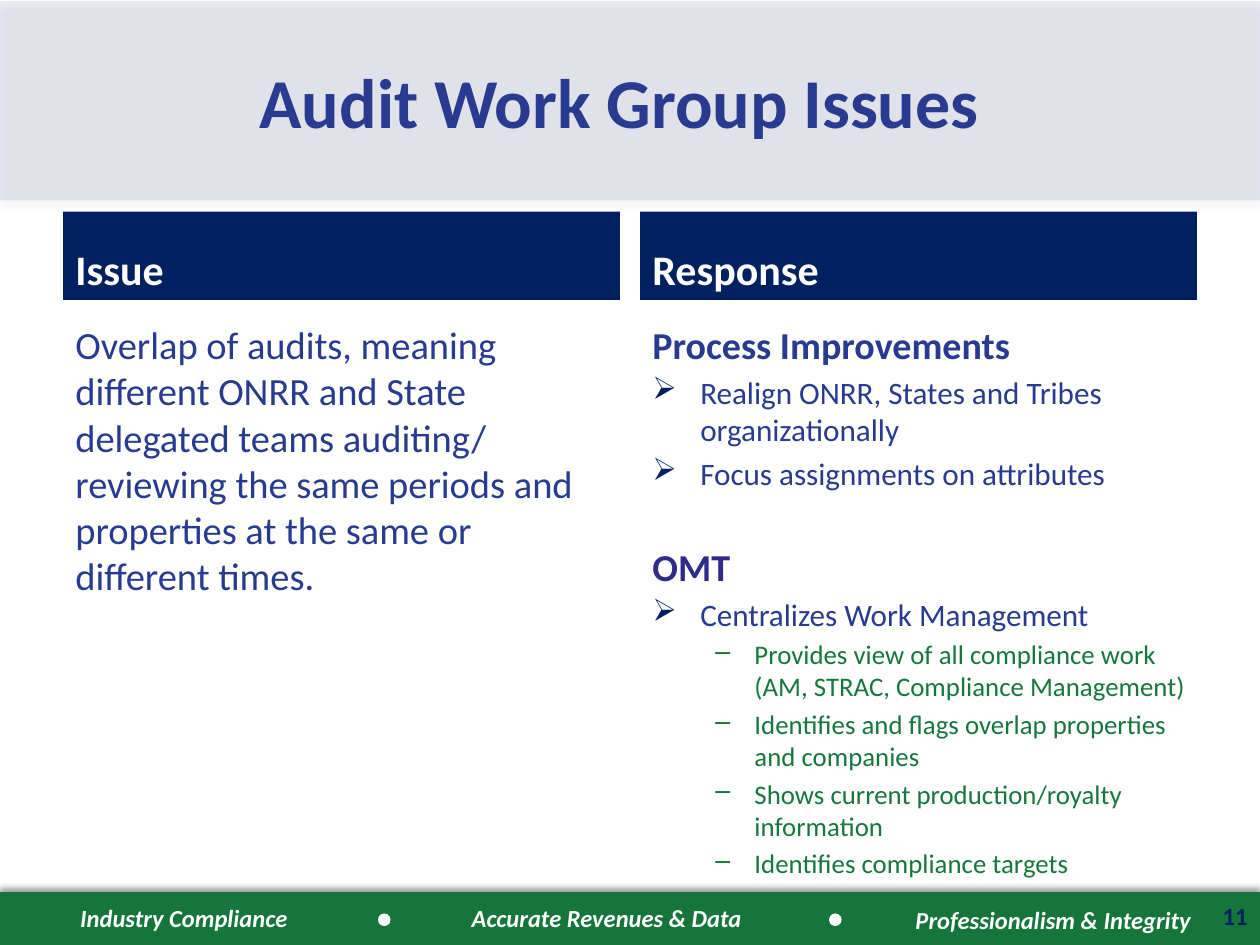
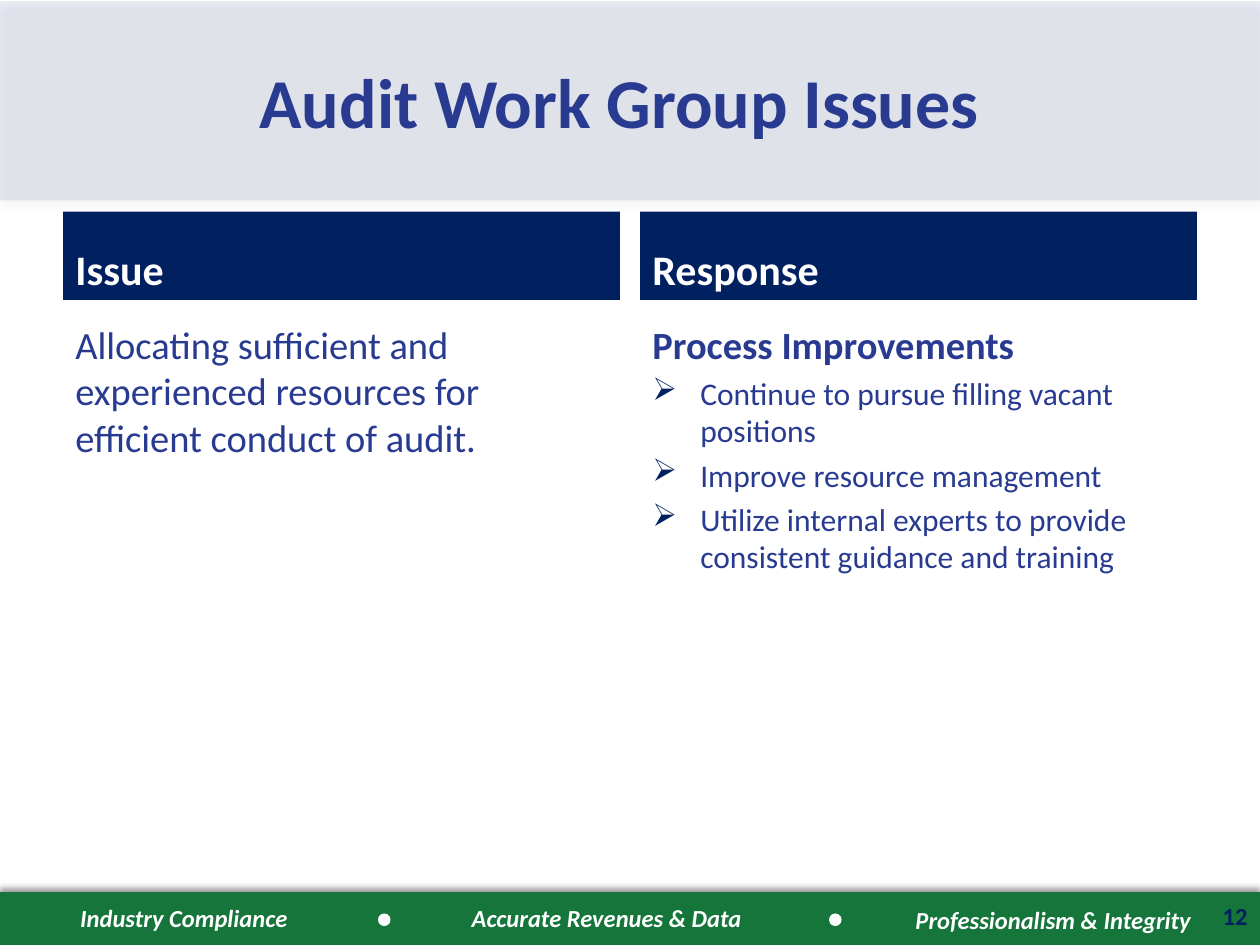
from lxml import etree
from pptx import Presentation
from pptx.dml.color import RGBColor
from pptx.enum.shapes import MSO_SHAPE
from pptx.enum.text import MSO_ANCHOR, PP_ALIGN
from pptx.oxml.ns import qn
from pptx.util import Inches, Pt

RECT, OVAL = MSO_SHAPE.RECTANGLE, MSO_SHAPE.OVAL
LEFT, CENTER, RIGHT = PP_ALIGN.LEFT, PP_ALIGN.CENTER, PP_ALIGN.RIGHT
TOP, MIDDLE, BOTTOM = MSO_ANCHOR.TOP, MSO_ANCHOR.MIDDLE, MSO_ANCHOR.BOTTOM

COLORS = {"blue": "283B91", "navy": "002060", "green": "15753B",
          "leaf": "16773C", "indigo": "2F2B89", "white": "FFFFFF",
          "shadow": "000000"}
FONT = "Calibri"

# Text styles: font attributes plus colour
STYLES = {
    "title": {"size": 40, "bold": True, "color": "blue"},
    "header": {"size": 24, "bold": True, "color": "white"},
    "issue": {"size": 22, "color": "blue"},
    "heading": {"size": 22, "bold": True, "color": "blue"},
    "tool": {"size": 22, "bold": True, "color": "indigo"},
    "point": {"size": 18, "color": "blue"},
    "detail": {"size": 15.5, "color": "leaf"},
    "motto": {"size": 14, "bold": True, "italic": True, "color": "white"},
    "number": {"size": 14, "bold": True, "color": "navy"},
}
# Bullets: character, left margin, hanging indent, colour (None follows text)
BULLETS = {"point": ("➢", 0.38, 0.38, "navy"),
           "detail": ("–", 0.81, 0.31, None)}

COLUMN_LEFTS = (0.5, 5.08)
COLUMN_WIDTH = 4.42
MOTTOS = (("Industry Compliance", 0.17, 7.12, 2.58),
          ("Accurate Revenues & Data", 3.42, 7.12, 2.79),
          ("Professionalism & Integrity", 6.92, 7.13, 2.88))
DOT_LEFTS = (3, 6.58)

TITLE = "Audit Work Group Issues"
SLIDES = (
    {"number": 11, "scale": 0.987, "response_width": 4.5,
     "issue": "Overlap of audits, meaning different ONRR and State delegated "
              "teams auditing/ reviewing the same periods and properties at "
              "the same or different times.",
     "response": (
         ("heading", "Process Improvements"),
         ("point", "Realign ONRR, States and Tribes organizationally"),
         ("point", "Focus assignments on attributes"),
         ("tool", "OMT"),
         ("point", "Centralizes Work Management"),
         ("detail", "Provides view of all compliance work "
                    "(AM, STRAC, Compliance Management)"),
         ("detail", "Identifies and flags overlap properties and companies"),
         ("detail", "Shows current production/royalty information"),
         ("detail", "Identifies compliance targets"))},
    {"number": 12, "scale": 1, "response_width": COLUMN_WIDTH,
     "issue": "Allocating sufficient and experienced resources for efficient "
              "conduct of audit.",
     "response": (
         ("heading", "Process Improvements"),
         ("point", "Continue to pursue filling vacant positions"),
         ("point", "Improve resource management"),
         ("point", "Utilize internal experts to provide consistent guidance "
                   "and training"))},
)


def rgb(name):
    return RGBColor.from_string(COLORS[name])


def add_color(parent, name, alpha=None):
    color = etree.SubElement(parent, qn("a:srgbClr"), val=COLORS[name])
    if alpha is not None:
        etree.SubElement(color, qn("a:alpha"), val=str(alpha * 1000))


def add_block(slide, kind, box, color):
    """A filled preset shape without outline or shadow."""
    block = slide.shapes.add_shape(kind, *map(Inches, box))
    block.shadow.inherit = False
    block.fill.solid()
    block.fill.fore_color.rgb = rgb(color)
    block.line.fill.background()
    return block


def cast_shadow(block, direction):
    effects = block._element.spPr.find(qn("a:effectLst"))
    shadow = etree.SubElement(
        effects, qn("a:outerShdw"), blurRad=str(Pt(4)), dist=str(Pt(3)),
        dir=str(direction * 60000), rotWithShape="0")
    add_color(shadow, "shadow", 40)


def make_translucent(block, alpha):
    color = block._element.spPr.find(qn("a:solidFill"))[0]
    etree.SubElement(color, qn("a:alpha"), val=str(alpha * 1000))


def add_bullet(paragraph, style):
    char, margin, hanging, color = BULLETS[style]
    props = paragraph._p.get_or_add_pPr()
    props.set("marL", str(Inches(margin)))
    props.set("indent", str(-Inches(hanging)))
    if color:
        add_color(etree.SubElement(props, qn("a:buClr")), color)
    etree.SubElement(props, qn("a:buChar"), char=char)


def style_font(font, style, scale):
    values = dict(STYLES[style], name=FONT)
    font.color.rgb = rgb(values.pop("color"))
    values["size"] = Pt(round(values["size"] * scale, 1))
    for attribute, value in values.items():
        setattr(font, attribute, value)


def write(shape, lines, align=LEFT, anchor=TOP, scale=1):
    """Fill a shape with (style, text) lines."""
    frame = shape.text_frame
    frame.word_wrap = True
    frame.vertical_anchor = anchor
    for index, (style, text) in enumerate(lines):
        paragraph = frame.add_paragraph() if index else frame.paragraphs[0]
        paragraph.alignment = align
        if style in BULLETS:
            add_bullet(paragraph, style)
        if index:
            # A second heading opens a new group, one line further down
            gap = 29.5 if style == "tool" else STYLES[style]["size"] * 0.2
            paragraph.space_before = Pt(gap)
        run = paragraph.add_run()
        run.text = text
        style_font(run.font, style, scale)


def add_text(slide, box, lines, **layout):
    write(slide.shapes.add_textbox(*map(Inches, box)), lines, **layout)


def add_footer(slide, number):
    cast_shadow(add_block(slide, RECT, (0, 7.08, 10, 0.42), "green"), 270)
    for motto, left, top, width in MOTTOS:
        add_text(slide, (left, top, width, 0.34), [("motto", motto)],
                 align=CENTER)
    for left in DOT_LEFTS:
        add_block(slide, OVAL, (left, 7.25, 0.1, 0.1), "white")
    add_text(slide, (9.58, 7.1, 0.42, 0.4), [("number", str(number))],
             align=RIGHT)


def add_title(slide):
    band = add_block(slide, RECT, (0, 0.01, 10, 1.58), "blue")
    make_translucent(band, 10)
    cast_shadow(band, 90)
    add_text(slide, (1.58, 0.17, 6.67, 1.25), [("title", TITLE)],
             align=CENTER, anchor=MIDDLE)


def add_column(slide, left, header, lines, width=COLUMN_WIDTH, scale=1):
    bar = add_block(slide, RECT, (left, 1.68, COLUMN_WIDTH, 0.7), "navy")
    write(bar, [("header", header)], anchor=BOTTOM)
    add_text(slide, (left, 2.5, width, 4.32), lines, scale=scale)


def main():
    deck = Presentation()
    deck.slide_width, deck.slide_height = Inches(10), Inches(7.5)
    blank = deck.slide_layouts[6]
    issue_left, response_left = COLUMN_LEFTS
    for content in SLIDES:
        slide = deck.slides.add_slide(blank)
        add_footer(slide, content["number"])
        add_title(slide)
        add_column(slide, issue_left, "Issue", [("issue", content["issue"])])
        add_column(slide, response_left, "Response", content["response"],
                   content["response_width"], content["scale"])
    deck.save("out.pptx")


if __name__ == "__main__":
    main()
